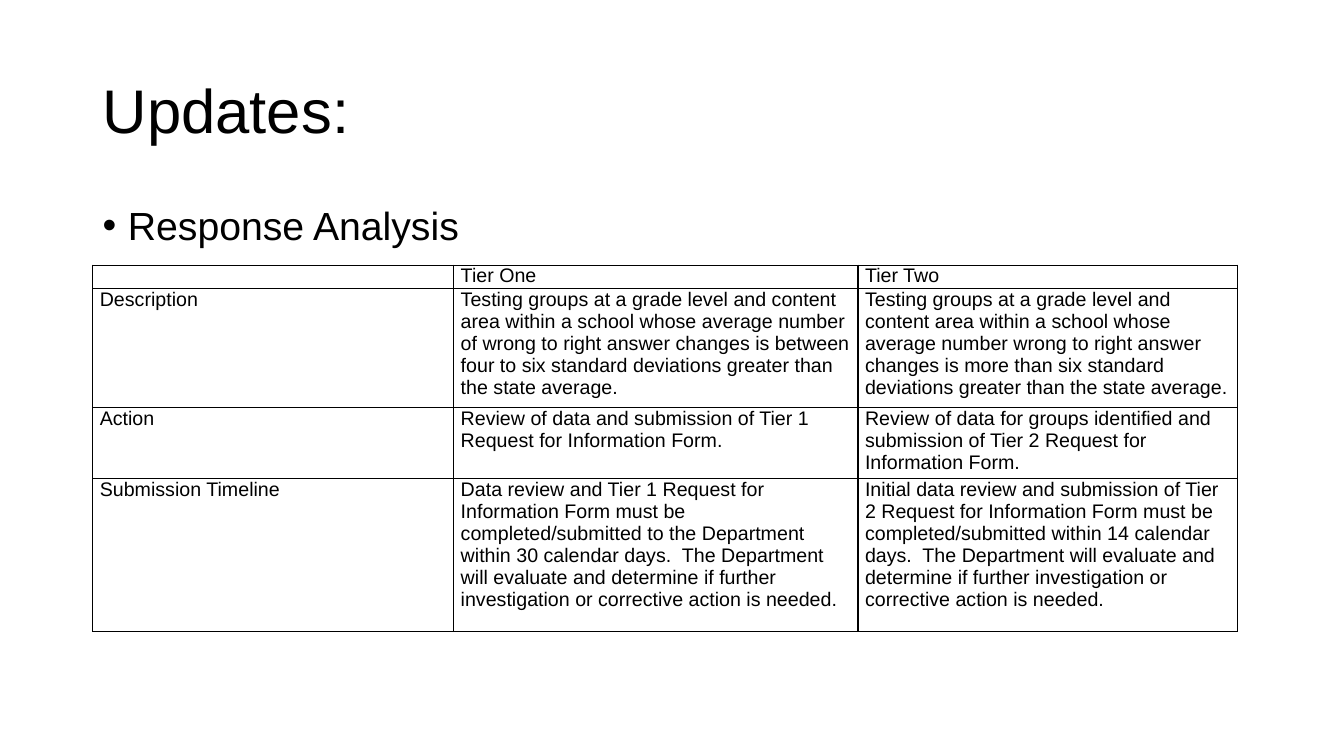
"""Builds the Updates slide with its table of response analysis tiers."""
from lxml import etree
from pptx import Presentation
from pptx.dml.color import RGBColor
from pptx.enum.text import MSO_ANCHOR
from pptx.oxml.ns import qn
from pptx.util import Inches, Pt

MIDDLE, TOP = MSO_ANCHOR.MIDDLE, MSO_ANCHOR.TOP
FONT, BLACK = "Arial", "000000"
WIDTH, HEIGHT = 13.33, 7.5
LEFT = 0.92
TITLE = "Updates:"
TOPIC = "Response Analysis"
TIERS = [
    ("", "Tier One", "Tier Two"),
    ("Description",
     "Testing groups at a grade level and content area within a school whose average "
     "number of wrong to right answer changes is between four to six standard "
     "deviations greater than the state average.",
     "Testing groups at a grade level and content area within a school whose average "
     "number wrong to right answer changes is more than six standard deviations "
     "greater than the state average."),
    ("Action",
     "Review of data and submission of Tier 1 Request for Information Form.",
     "Review of data for groups identified and submission of Tier 2 Request for "
     "Information Form."),
    ("Submission Timeline",
     "Data review and Tier 1 Request for Information Form must be completed/submitted "
     "to the Department within 30 calendar days.  The Department will evaluate and "
     "determine if further investigation or corrective action is needed.",
     "Initial data review and submission of Tier 2 Request for Information Form must "
     "be completed/submitted within 14 calendar days.  The Department will evaluate "
     "and determine if further investigation or corrective action is needed."),
]
COLUMNS = [3.58, 4.01, 3.76]
ROWS = [0.22, 1.18, 0.68, 1.52]


def rgb(color):
    """Turn a hex string into a colour."""
    return RGBColor.from_string(color)


def write(tf, text, size, color=BLACK, spacing=None, bullet=None, indent=0.25):
    """Write one formatted paragraph into a text frame."""
    tf.word_wrap = True
    p = tf.paragraphs[0]
    if bullet:
        pPr = p._p.get_or_add_pPr()
        pPr.set("marL", str(Inches(indent)))
        pPr.set("indent", str(-Inches(indent)))
        etree.SubElement(pPr, qn("a:buFont"), typeface=FONT)
        etree.SubElement(pPr, qn("a:buChar"), char=bullet)
    if spacing:
        p.line_spacing = spacing
    if not text:
        etree.SubElement(p._p, qn("a:endParaRPr"), sz=str(size * 100))
        return
    r = p.add_run()
    r.text = text
    r.font.name, r.font.size = FONT, Pt(size)
    r.font.color.rgb = rgb(color)


def add_text(s, box, text, size, anchor=TOP, **fmt):
    """Add a text box holding one paragraph."""
    tf = s.shapes.add_textbox(*map(Inches, box)).text_frame
    tf.vertical_anchor = anchor
    write(tf, text, size, **fmt)


def style_cell(cell, color=BLACK, width=1):
    """Give a cell its margins, borders and empty fill."""
    cell.margin_left = cell.margin_right = Inches(0.07)
    cell.margin_top = cell.margin_bottom = 0
    tcPr = cell._tc.get_or_add_tcPr()
    for side in ("lnL", "lnR", "lnT", "lnB"):
        ln = etree.SubElement(tcPr, qn(f"a:{side}"), w=str(Pt(width)))
        fill = etree.SubElement(ln, qn("a:solidFill"))
        etree.SubElement(fill, qn("a:srgbClr"), val=color)
    cell.fill.background()


def add_tiers(s, left, top):
    """Add the table of tiers."""
    box = map(Inches, (left, top, sum(COLUMNS), sum(ROWS)))
    table = s.shapes.add_table(len(ROWS), len(COLUMNS), *box).table
    table.first_row = table.horz_banding = False
    for column, width in zip(table.columns, COLUMNS):
        column.width = Inches(width)
    for row, height, texts in zip(table.rows, ROWS, TIERS):
        row.height = Inches(height)
        for cell, text in zip(row.cells, texts):
            style_cell(cell)
            write(cell.text_frame, text, 14)


def main():
    """Build and save the slide."""
    prs = Presentation()
    prs.slide_width, prs.slide_height = Inches(WIDTH), Inches(HEIGHT)
    s = prs.slides.add_slide(prs.slide_layouts[6])
    width = WIDTH - 2 * LEFT
    add_text(s, (LEFT, 0.4, width, 1.45), TITLE, 44, anchor=MIDDLE, spacing=0.9)
    add_text(s, (LEFT, 2, width, 4.76), TOPIC, 28, spacing=0.9, bullet="•")
    add_tiers(s, LEFT, 2.63)
    prs.save("out.pptx")


if __name__ == "__main__":
    main()
